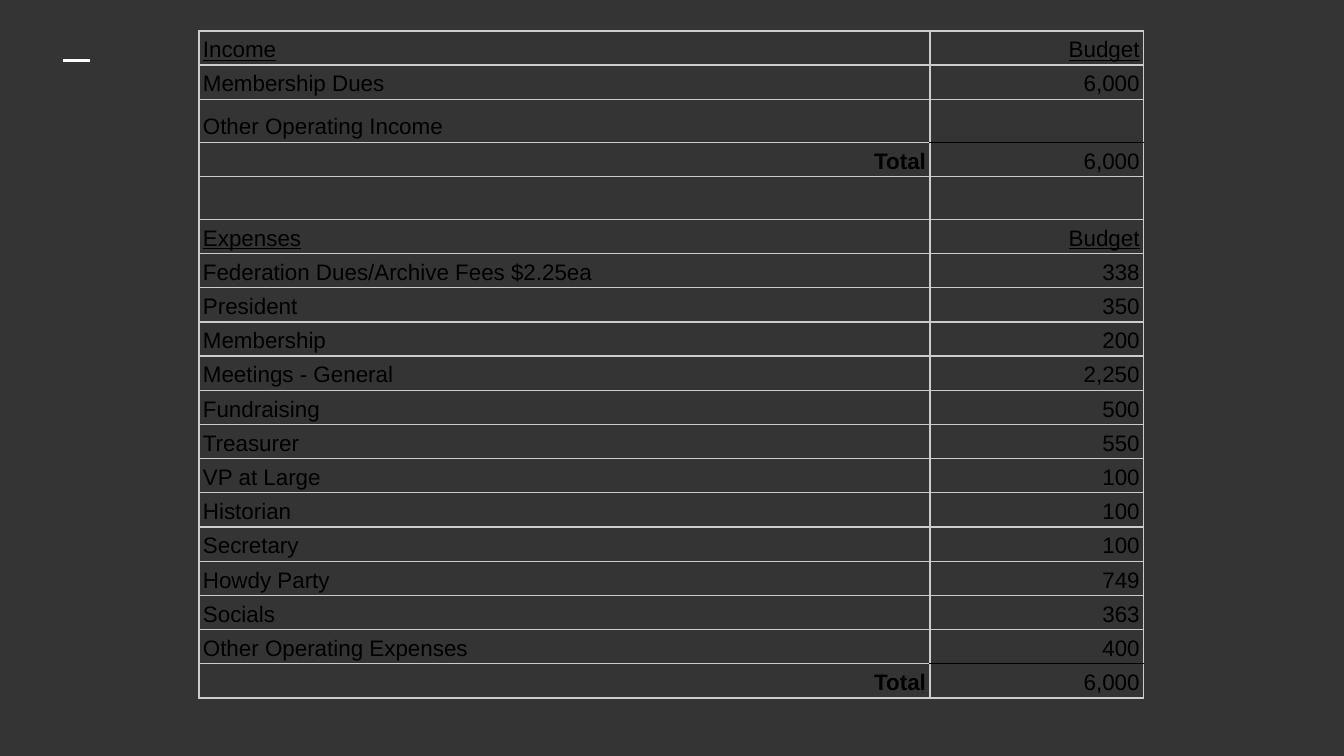
from lxml import etree
from pptx import Presentation, util as u
from pptx.dml.color import RGBColor
from pptx.enum import shapes, text
from pptx.oxml import ns

# Content
INCOME = [
    ("Income", "Budget"),
    ("Membership Dues", "6,000"),
    ("Other Operating Income", ""),
    ("Total", "6,000"),
]
EXPENSES = [
    ("Expenses", "Budget"),
    ("Federation Dues/Archive Fees $2.25ea", "338"),
    ("President", "350"),
    ("Membership", "200"),
    ("Meetings - General", "2,250"),
    ("Fundraising", "500"),
    ("Treasurer", "550"),
    ("VP at Large", "100"),
    ("Historian", "100"),
    ("Secretary", "100"),
    ("Howdy Party", "749"),
    ("Socials", "363"),
    ("Other Operating Expenses", "400"),
    ("Total", "6,000"),
]
ROWS = INCOME + [("", "")] + EXPENSES
HEADINGS = ("Income", "Expenses")

# Layout and format
COLORS = {"background": "343434", "text": "000000", "grid": "CCCCCC",
          "sum": "000000", "accent": "FFFFFF"}
WIDTH = 10
HEIGHT = WIDTH * 9 / 16
LEFT, TOP = 1.48, 0.23
COLUMNS = (5.44, 1.59)
ROW, EMPTY_ROW = 0.25, 0.32
BORDER = 0.75


def color(name):
    return RGBColor.from_string(COLORS[name])


def write(cell, words, align=text.PP_ALIGN.LEFT, size=12, bold=False, underline=False):
    paragraph = cell.text_frame.paragraphs[0]
    paragraph.alignment = align
    paragraph.line_spacing = 1.15
    run = paragraph.add_run()
    run.text = words
    run.font.name = "Arial"
    run.font.size = u.Pt(size)
    run.font.bold = bold
    run.font.underline = underline
    run.font.color.rgb = color("text")


def set_borders(cell, **names):
    properties = cell._tc.get_or_add_tcPr()
    for index, side in enumerate(("L", "R", "T", "B")):
        line = etree.Element(ns.qn(f"a:ln{side}"), w=str(u.Pt(BORDER)))
        fill = etree.SubElement(line, ns.qn("a:solidFill"))
        etree.SubElement(fill, ns.qn("a:srgbClr"), val=COLORS[names.get(side, "grid")])
        properties.insert(index, line)


def add_accent(slide):
    line = slide.shapes.add_connector(
        shapes.MSO_CONNECTOR.STRAIGHT,
        u.Inches(0.47), u.Inches(0.45), u.Inches(0.67), u.Inches(0.45))
    line.line.color.rgb = color("accent")
    line.line.width = u.Pt(1.5)
    etree.SubElement(line._element.spPr, ns.qn("a:effectLst"))


def add_budget(slide):
    heights = [ROW if all(row) else EMPTY_ROW for row in ROWS]
    table = slide.shapes.add_table(
        len(ROWS), len(COLUMNS), u.Inches(LEFT), u.Inches(TOP),
        u.Inches(sum(COLUMNS)), u.Inches(sum(heights))).table
    table.first_row = table.horz_banding = False
    for column, width in zip(table.columns, COLUMNS):
        column.width = u.Inches(width)

    for i, (row, height) in enumerate(zip(ROWS, heights)):
        table.rows[i].height = u.Inches(height)
        is_total = row[0] == "Total"
        before_total = i + 1 < len(ROWS) and ROWS[i + 1][0] == "Total"
        for j, words in enumerate(row):
            cell = table.cell(i, j)
            cell.fill.background()
            cell.vertical_anchor = text.MSO_ANCHOR.BOTTOM
            cell.margin_left = cell.margin_right = u.Inches(0.03)
            cell.margin_top = cell.margin_bottom = u.Inches(0.02 if words else 0)
            if words:
                right = j == 1 or is_total
                write(cell, words,
                      align=text.PP_ALIGN.RIGHT if right else text.PP_ALIGN.LEFT,
                      bold=is_total and j == 0, underline=row[0] in HEADINGS)
            # A dark rule separates the amounts from their total
            set_borders(cell,
                        T="sum" if j == 1 and is_total else "grid",
                        B="sum" if j == 1 and before_total else "grid")


def main():
    presentation = Presentation()
    presentation.slide_width = u.Inches(WIDTH)
    presentation.slide_height = u.Inches(HEIGHT)
    slide = presentation.slides.add_slide(presentation.slide_layouts[6])
    slide.background.fill.solid()
    slide.background.fill.fore_color.rgb = color("background")
    add_accent(slide)
    add_budget(slide)
    presentation.save("out.pptx")


if __name__ == "__main__":
    main()
